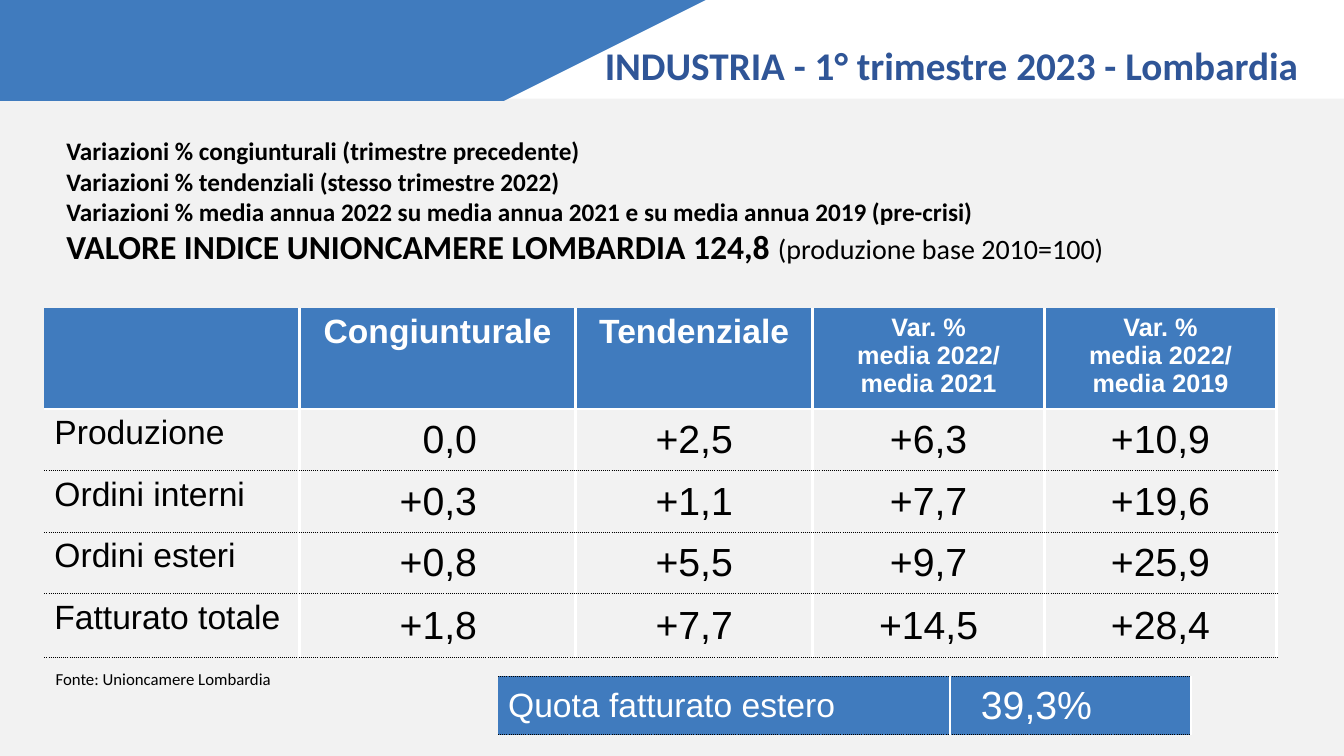
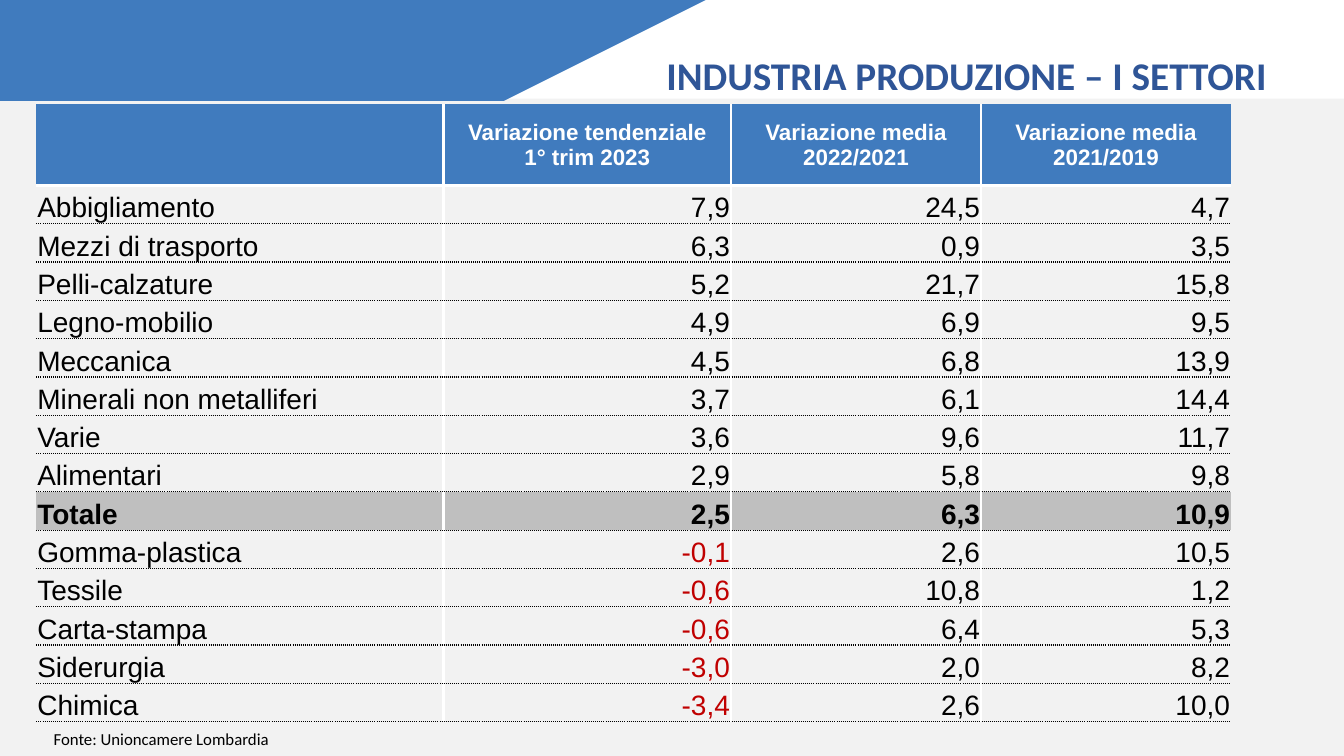
from dataclasses import dataclass
from typing import Optional

from lxml.etree import SubElement
from pptx import Presentation
from pptx.dml.color import RGBColor
from pptx.enum.shapes import MSO_SHAPE
from pptx.enum.text import MSO_ANCHOR, MSO_AUTO_SIZE, PP_ALIGN
from pptx.oxml.ns import qn
from pptx.util import Inches, Pt

# Shared palette and fonts
BLUE, NAVY, WHITE, BLACK = "407BBE", "2F5597", "FFFFFF", "000000"
BACKGROUND, TOTAL_GREY, RED = "F2F2F2", "BFBFBF", "C00000"
TEXT_FONT, TABLE_FONT = "Calibri", "Arial"
BAND_HEIGHT = 0.98

# Cell borders: colour, width in points, dash
WHITE_LINE = (WHITE, 2, "solid")
DOTTED_LINE = (BLACK, 1, "sysDot")

# Cell margins: left, top, right, bottom
NORMAL = (0.1, 0.05, 0.1, 0.05)
NONE = (0, 0, 0, 0)
TIGHT = (0.01, 0.01, 0.01, 0)
INDENTED_RIGHT = (0.07, 0, 0.98, 0)


def color(value):
    return RGBColor.from_string(value)


@dataclass
class CellStyle:
    size: float
    color: str = BLACK
    bold: bool = False
    fill: Optional[str] = None
    align: PP_ALIGN = PP_ALIGN.LEFT
    anchor: MSO_ANCHOR = MSO_ANCHOR.TOP
    margins: tuple = NORMAL


class Deck:
    def __init__(self):
        self.presentation = Presentation()
        self.presentation.slide_width = Inches(13.33)
        self.presentation.slide_height = Inches(7.5)
        self.slide = None

    def new_slide(self):
        self.slide = self.presentation.slides.add_slide(self.presentation.slide_layouts[6])
        fill = self.slide.background.fill
        fill.solid()
        fill.fore_color.rgb = color(BACKGROUND)
        # Header: white band under a slanted blue one
        shapes = self.slide.shapes
        self.paint(shapes.add_shape(MSO_SHAPE.RECTANGLE, Inches(3.94), 0,
                                    Inches(9.4), Inches(BAND_HEIGHT)), WHITE)
        outline = shapes.build_freeform(0, 0, scale=Inches(1))
        outline.add_line_segments([(6.51, 0), (5.05, BAND_HEIGHT), (0, BAND_HEIGHT)])
        self.paint(outline.convert_to_shape(), BLUE)

    def paint(self, shape, fill):
        shape.shadow.inherit = False
        shape.fill.solid()
        shape.fill.fore_color.rgb = color(fill)
        shape.line.fill.background()

    def format(self, font, name, size, text_color, bold):
        font.name = name
        font.size = Pt(size)
        font.bold = bold
        font.color.rgb = color(text_color)

    def text(self, box, lines, align=PP_ALIGN.LEFT, anchor=MSO_ANCHOR.MIDDLE,
             text_color=BLACK, wrap=True):
        """Each line is a list of (text, size, bold) runs."""
        frame = self.slide.shapes.add_textbox(*map(Inches, box)).text_frame
        frame.word_wrap = wrap
        frame.auto_size = MSO_AUTO_SIZE.SHAPE_TO_FIT_TEXT
        frame.vertical_anchor = anchor
        for index, line in enumerate(lines):
            paragraph = frame.add_paragraph() if index else frame.paragraphs[0]
            paragraph.alignment = align
            for content, size, bold in line:
                run = paragraph.add_run()
                run.text = content
                self.format(run.font, TEXT_FONT, size, text_color, bold)

    def title(self, box, content, align=PP_ALIGN.LEFT):
        self.text(box, [[(content, 28, True)]], align, text_color=NAVY)

    def source(self, left, top):
        self.text((left, top, 2.36, 0.3), [[("Fonte: Unioncamere Lombardia", 12, False)]],
                  PP_ALIGN.CENTER, wrap=False)

    def borders(self, cell, lines):
        properties = cell._tc.get_or_add_tcPr()
        for side in "LRTB":
            line = lines.get(side)
            element = SubElement(properties, qn(f"a:ln{side}"))
            if line is None:
                element.set("w", "0")
                SubElement(element, qn("a:noFill"))
                continue
            line_color, width, dash = line
            element.set("w", str(Pt(width)))
            fill = SubElement(element, qn("a:solidFill"))
            SubElement(fill, qn("a:srgbClr")).set("val", line_color)
            SubElement(element, qn("a:prstDash")).set("val", dash)

    def cell(self, cell, content, style):
        cell.vertical_anchor = style.anchor
        (cell.margin_left, cell.margin_top,
         cell.margin_right, cell.margin_bottom) = map(Inches, style.margins)
        if style.fill:
            cell.fill.solid()
            cell.fill.fore_color.rgb = color(style.fill)
        else:
            cell.fill.background()
        cell.text_frame.text = content
        for paragraph in cell.text_frame.paragraphs:
            paragraph.alignment = style.align
            self.format(paragraph.font, TABLE_FONT, style.size, style.color, style.bold)
            for run in paragraph.runs:
                self.format(run.font, TABLE_FONT, style.size, style.color, style.bold)

    def table(self, left, top, widths, heights, rows, style, header=True, right_edge=True):
        """style(row, column, content) gives the CellStyle of a cell."""
        table = self.slide.shapes.add_table(
            len(rows), len(widths), Inches(left), Inches(top),
            Inches(sum(widths)), Inches(sum(heights))).table
        table.first_row = table.horz_banding = False
        for column, width in zip(table.columns, widths):
            column.width = Inches(width)
        for row, height in zip(table.rows, heights):
            row.height = Inches(height)
        # Horizontal rules, from the top edge down to the bottom edge
        rules = [None, WHITE_LINE] if header else [DOTTED_LINE]
        rules += [DOTTED_LINE] * (len(rows) + 1 - len(rules))
        last = len(widths) - 1
        for r, row in enumerate(rows):
            for c, content in enumerate(row):
                cell = table.cell(r, c)
                self.borders(cell, {
                    "L": WHITE_LINE if c else None,
                    "R": WHITE_LINE if c < last or right_edge else None,
                    "T": rules[r],
                    "B": rules[r + 1]})
                self.cell(cell, content, style(r, c, content))


def summary_style(row, column, content):
    if row == 0:
        return CellStyle(18 if column > 2 else 24, WHITE, True, BLUE, PP_ALIGN.CENTER)
    if column == 0:
        return CellStyle(24)
    if column == 1:
        return CellStyle(28, align=PP_ALIGN.RIGHT, anchor=MSO_ANCHOR.MIDDLE,
                         margins=INDENTED_RIGHT)
    return CellStyle(28, align=PP_ALIGN.CENTER, anchor=MSO_ANCHOR.MIDDLE,
                     margins=NORMAL if column == 2 else NONE)


def share_style(row, column, content):
    if column == 0:
        return CellStyle(24, WHITE, fill=BLUE, anchor=MSO_ANCHOR.MIDDLE)
    return CellStyle(28, WHITE, False, BLUE, PP_ALIGN.RIGHT, MSO_ANCHOR.MIDDLE, INDENTED_RIGHT)


def sector_style(row, column, content):
    if row == 0:
        return CellStyle(16, WHITE, True, BLUE, PP_ALIGN.CENTER, MSO_ANCHOR.MIDDLE, TIGHT)
    total = SECTORS[row][0] == "Totale"
    return CellStyle(20, RED if content.startswith("-") else BLACK, total,
                     TOTAL_GREY if total else None,
                     PP_ALIGN.RIGHT if column else PP_ALIGN.LEFT,
                     MSO_ANCHOR.BOTTOM, TIGHT)


SUMMARY = [
    ("", "Congiunturale", "Tendenziale", "Var. %\nmedia 2022/\nmedia 2021",
     "Var. %\nmedia 2022/ media 2019"),
    ("Produzione", "0,0", "+2,5", "+6,3", "+10,9"),
    ("Ordini interni", "+0,3", "+1,1", "+7,7", "+19,6"),
    ("Ordini esteri", "+0,8", "+5,5", "+9,7", "+25,9"),
    ("Fatturato totale", "+1,8", "+7,7", "+14,5", "+28,4"),
]

SECTORS = [
    ("", "Variazione tendenziale\n1° trim 2023", "Variazione media 2022/2021",
     "Variazione media 2021/2019"),
    ("Abbigliamento", "7,9", "24,5", "4,7"),
    ("Mezzi di trasporto", "6,3", "0,9", "3,5"),
    ("Pelli-calzature", "5,2", "21,7", "15,8"),
    ("Legno-mobilio", "4,9", "6,9", "9,5"),
    ("Meccanica", "4,5", "6,8", "13,9"),
    ("Minerali non metalliferi", "3,7", "6,1", "14,4"),
    ("Varie", "3,6", "9,6", "11,7"),
    ("Alimentari", "2,9", "5,8", "9,8"),
    ("Totale", "2,5", "6,3", "10,9"),
    ("Gomma-plastica", "-0,1", "2,6", "10,5"),
    ("Tessile", "-0,6", "10,8", "1,2"),
    ("Carta-stampa", "-0,6", "6,4", "5,3"),
    ("Siderurgia", "-3,0", "2,0", "8,2"),
    ("Chimica", "-3,4", "2,6", "10,0"),
]


def main():
    deck = Deck()

    # Slide 1: industry summary
    deck.new_slide()
    deck.text((0.56, 1.29, 11.85, 1.41), [
        [("Variazioni % congiunturali (trimestre precedente)", 18, True)],
        [("Variazioni % tendenziali (stesso trimestre 2022)", 18, True)],
        [("Variazioni % media annua 2022 su media annua 2021 e su media annua 2019 (pre-crisi)",
          18, True)],
        [("VALORE INDICE UNIONCAMERE LOMBARDIA 124,8 ", 24, True),
         ("(produzione base 2010=100)", 20, False)],
    ])
    deck.table(0.44, 3.06, [2.53, 2.74, 2.35, 2.3, 2.3], [1] + [0.61] * 3 + [0.63],
               SUMMARY, summary_style)
    deck.source(0.44, 6.58)
    deck.table(4.94, 6.71, [4.48, 2.39], [0.58], [("Quota fatturato estero", "39,3%")],
               share_style, header=False)
    deck.title((5.9, 0.36, 7.27, 0.57), "INDUSTRIA - 1° trimestre 2023 - Lombardia")

    # Slide 2: production by sector
    deck.new_slide()
    deck.source(0.42, 7.18)
    deck.title((6.48, 0.46, 6.21, 0.57), "INDUSTRIA PRODUZIONE – I SETTORI", PP_ALIGN.CENTER)
    deck.table(0.36, 1.03, [4.04, 2.85, 2.48, 2.48], [0.81] + [0.38] * 14,
               SECTORS, sector_style, right_edge=False)

    deck.presentation.save("out.pptx")


if __name__ == "__main__":
    main()
